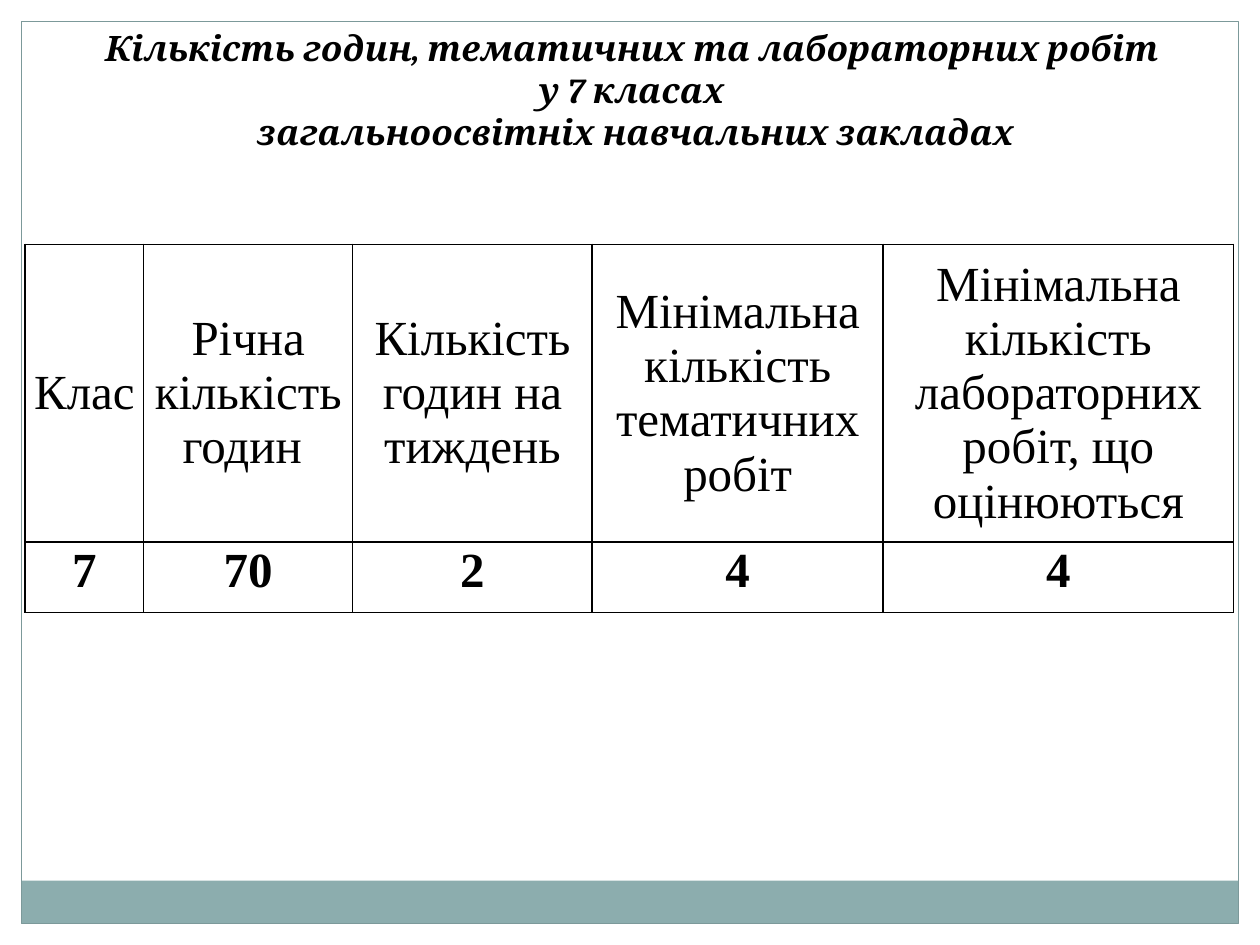
from lxml import etree
from pptx import Presentation, util as u
from pptx.dml.color import RGBColor
from pptx.enum import shapes, text
from pptx.oxml.ns import qn


def paint(target, colour):
    target.solid()
    target.fore_color.rgb = RGBColor.from_string(colour)


def style(paragraph, font, size, bold=False, italic=False):
    paragraph.alignment = text.PP_ALIGN.CENTER
    for run in paragraph.runs:
        run.font.name = font
        run.font.size = u.Pt(size)
        run.font.bold = bold
        run.font.italic = italic
        paint(run.font.fill, "000000")


deck = Presentation()
deck.slide_width, deck.slide_height = u.Inches(10), u.Inches(7.5)
W, H = deck.slide_width, deck.slide_height
slide = deck.slides.add_slide(deck.slide_layouts[5])
margin = u.Inches(0.17)
band = u.Inches(0.34)

for left, top, width, height, fill, line in [
    (0, 0, W, margin, "FFFFFF", None),
    (W - margin, 0, margin, H, "FFFFFF", None),
    (0, 0, margin, H, "FFFFFF", None),
    (margin, H - margin - band, W - 2 * margin, band, "8CADAE", None),
    (margin, margin, W - 2 * margin, H - 2 * margin, None, "7C999A"),
]:
    panel = slide.shapes.add_shape(shapes.MSO_SHAPE.RECTANGLE, left, top, width, height)
    panel.shadow.inherit = False
    if fill:
        paint(panel.fill, fill)
        panel.line.fill.background()
    else:
        panel.fill.background()
        paint(panel.line.fill, line)
        panel.line.width = u.Pt(0.75)

heading = slide.shapes.title
heading.left, heading.top = u.Inches(0.2), u.Inches(0.16)
heading.width, heading.height = u.Inches(9.69), u.Inches(1.11)
frame = heading.text_frame
frame.text = "\n".join([
    "Кількість годин, тематичних та лабораторних робіт ",
    "у 7 класах ",
    "загальноосвітніх навчальних закладах",
])
frame.word_wrap = True
frame.auto_size = text.MSO_AUTO_SIZE.NONE
frame.vertical_anchor = text.MSO_ANCHOR.TOP
for paragraph in frame.paragraphs:
    style(paragraph, "Cambria", 20, bold=True, italic=True)

hours = [
    ("Клас", "7", 0.94),
    ("Річна кількість годин ", "70", 1.66),
    ("Кількість годин на тиждень", "2", 1.9),
    ("Мінімальна кількість тематичних робіт", "4", 2.31),
    ("Мінімальна кількість лабораторних робіт, що оцінюються", "4", 2.78),
]
row_heights = [2.36, 0.56]
table = slide.shapes.add_table(
    len(row_heights), len(hours), u.Inches(0.2), u.Inches(1.94),
    u.Inches(sum(entry[2] for entry in hours)), u.Inches(sum(row_heights)),
).table
table.horz_banding = False
for row, height in zip(table.rows, row_heights):
    row.height = u.Inches(height)

for c, (label, count, width) in enumerate(hours):
    table.columns[c].width = u.Inches(width)
    for r, wording in enumerate([label, count]):
        cell = table.cell(r, c)
        cell.text_frame.text = wording
        cell.margin_left = cell.margin_right = u.Inches(0.02)
        cell.margin_top = cell.margin_bottom = u.Inches(0.02)
        cell.vertical_anchor = text.MSO_ANCHOR.TOP if r else text.MSO_ANCHOR.MIDDLE
        style(cell.text_frame.paragraphs[0], "Times New Roman", 28, bold=r == 1)
        borders = cell._tc.get_or_add_tcPr()
        for side in ("a:lnL", "a:lnR", "a:lnT", "a:lnB"):
            edge = etree.SubElement(borders, qn(side), w=str(u.Pt(1)))
            ink = etree.SubElement(edge, qn("a:solidFill"))
            etree.SubElement(ink, qn("a:srgbClr"), val="000000")
        cell.fill.background()

deck.save("out.pptx")
